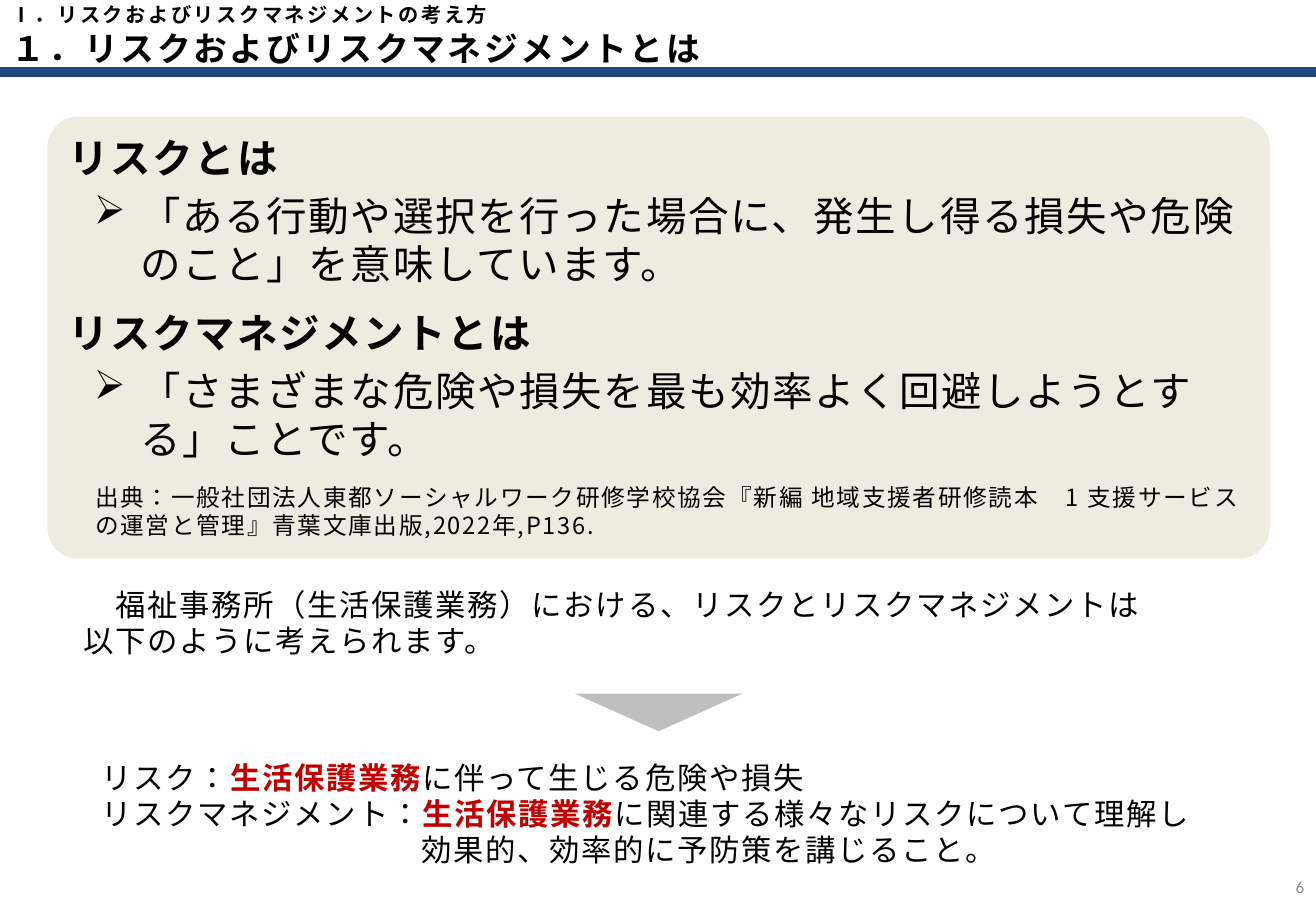
import dataclasses

import lxml.etree
import pptx
import pptx.dml.color
import pptx.enum.shapes
import pptx.enum.text
import pptx.oxml
import pptx.oxml.ns
import pptx.util

SCALE = 9144  # EMU in one px, 100 px to the inch

QN = pptx.oxml.ns.qn
SHAPE = pptx.enum.shapes.MSO_SHAPE
ALIGN = pptx.enum.text.PP_ALIGN
ANCHOR = pptx.enum.text.MSO_ANCHOR


@dataclasses.dataclass(frozen=True)
class Theme:
    # Colours
    ink: str = "000000"
    navy: str = "1F497D"
    cream: str = "EEECE1"
    grey: str = "BFBFBF"
    red: str = "C00000"
    pale: str = "898989"
    # Fonts and type sizes
    font: str = "Noto Sans CJK JP"
    digit: str = "Calibri"
    head: int = 24
    title: int = 20
    body: int = 18
    note: int = 14
    small: int = 12
    page: int = 10
    # Line height as a share of the type size
    lead: float = 1.19


def px(value):
    return pptx.util.Emu(value * SCALE)


def tint(value):
    return pptx.dml.color.RGBColor.from_string(value)


class Deck:
    def __init__(self, theme, width, height):
        self.theme = theme
        self.show = pptx.Presentation()
        self.show.slide_width = px(width)
        self.show.slide_height = px(height)
        self.slide = self.show.slides.add_slide(self.show.slide_layouts[6])

    def rule(self, y, width, weight):
        line = self.slide.shapes.add_connector(
            pptx.enum.shapes.MSO_CONNECTOR.STRAIGHT, 0, px(y), px(width), px(y))
        line.line.color.rgb = tint(self.theme.navy)
        line.line.width = pptx.util.Pt(weight)
        props = line._element.find(QN("p:spPr"))
        lxml.etree.SubElement(props, QN("a:effectLst"))

    def shape(self, kind, area, fill):
        item = self.slide.shapes.add_shape(kind, *map(px, area))
        item.shadow.inherit = False
        item.fill.solid()
        item.fill.fore_color.rgb = tint(fill)
        item.line.fill.background()
        return item

    def text(self, area, inset=0, anchor=ANCHOR.TOP):
        box = self.slide.shapes.add_textbox(*map(px, area))
        return self.frame(box, inset, anchor)

    def frame(self, item, inset, anchor=ANCHOR.TOP):
        frame = item.text_frame
        frame.word_wrap = True
        frame.vertical_anchor = anchor
        frame.margin_top = px(inset)
        frame.margin_bottom = 0
        return frame

    def para(self, frame, parts, size, first=False, before=0, after=0,
             left=0, hang=0, bullet=None, align=ALIGN.LEFT, lead=True, **look):
        """Add a paragraph; parts is a list of (text, bold, colour)."""
        para = frame.paragraphs[0] if first else frame.add_paragraph()
        para.alignment = align
        para.space_before = pptx.util.Pt(before)
        para.space_after = pptx.util.Pt(after)
        if lead:
            para.line_spacing = pptx.util.Pt(round(size * self.theme.lead, 1))
        props = para._p.get_or_add_pPr()
        props.set("marL", str(px(left)))
        props.set("indent", str(px(-hang)))
        if bullet:
            mark = lxml.etree.SubElement(props, QN("a:buChar"))
            mark.set("char", bullet)
        for words, bold, colour in parts:
            if len(parts) == 1:
                para.text = words
            else:
                para.add_run().text = words
            for run in para.runs[-1 - words.count("\v"):]:
                self.style(run, size, bold, colour, **look)

    def style(self, run, size, bold, colour, font=None, gap=1.0):
        face = font or self.theme.font
        run.font.size = pptx.util.Pt(size)
        run.font.bold = bold
        run.font.color.rgb = tint(colour)
        run.font.name = face
        props = run._r.get_or_add_rPr()
        props.set("lang", "ja-JP")
        props.set("spc", str(int(gap * 100)))
        lxml.etree.SubElement(props, QN("a:ea")).set("typeface", face)


def main():
    look = Theme()
    deck = Deck(look, 1083, 750)

    # Header
    deck.rule(59, 1083, 6)
    for area, words, size in (
            ((0, 1, 907, 21), "Ⅰ．リスクおよびリスクマネジメントの考え方", look.small),
            ((0, 20, 907, 39), "１．リスクおよびリスクマネジメントとは", look.title)):
        frame = deck.text(area, anchor=ANCHOR.MIDDLE)
        deck.para(frame, [(words, True, look.ink)], size, first=True,
                  lead=False, gap=1.5)

    # Definitions
    panel = deck.shape(SHAPE.ROUNDED_RECTANGLE, (39, 96, 1006, 364), look.cream)
    panel.adjustments[0] = 0.07
    frame = deck.frame(panel, 6)
    terms = (
        ("リスクとは",
         "「ある行動や選択を行った場合に、発生し得る損失や危険のこと」を意味しています。"),
        ("リスクマネジメントとは",
         "「さまざまな危険や損失を最も効率よく回避しようとする」ことです。"),
    )
    for index, (term, sense) in enumerate(terms):
        deck.para(frame, [(term, True, look.ink)], look.head,
                  first=index == 0, before=12)
        deck.para(frame, [(sense, False, look.ink)], look.head,
                  before=6, left=59, hang=38, bullet="➢")
    source = ("出典：一般社団法人東都ソーシャルワーク研修学校協会『新編 地域支援者研修読本"
              "　1 支援サービスの運営と管理』青葉文庫出版,2022年,P136.")
    deck.para(frame, [(source, False, look.ink)], look.note, before=12, left=22)

    # Lead-in and arrow
    frame = deck.text((59, 478, 965, 71), 5)
    intro = ("　福祉事務所（生活保護業務）における、リスクとリスクマネジメントは\v"
             "以下のように考えられます。")
    deck.para(frame, [(intro, False, look.ink)], look.body, first=True, after=6)
    arrow = deck.shape(SHAPE.ISOSCELES_TRIANGLE, (473, 571, 138, 31), look.grey)
    arrow.rotation = 180

    # Meaning in welfare work
    frame = deck.text((74, 620, 934, 101), 5)
    duty = ("生活保護業務", True, look.red)
    pairs = (("リスク：", "に伴って生じる危険や損失"),
             ("リスクマネジメント：", "に関連する様々なリスクについて理解し"))
    for index, (label, rest) in enumerate(pairs):
        parts = [(label, False, look.ink), duty, (rest, False, look.ink)]
        deck.para(frame, parts, look.body, first=index == 0)
    deck.para(frame, [("効果的、効率的に予防策を講じること。", False, look.ink)],
              look.body, left=263)

    # Page number
    frame = deck.text((1042, 710, 41, 40), anchor=ANCHOR.MIDDLE)
    deck.para(frame, [("6", False, look.pale)], look.page, first=True,
              align=ALIGN.RIGHT, lead=False, font=look.digit, gap=0)

    deck.show.save("out.pptx")


if __name__ == "__main__":
    main()
